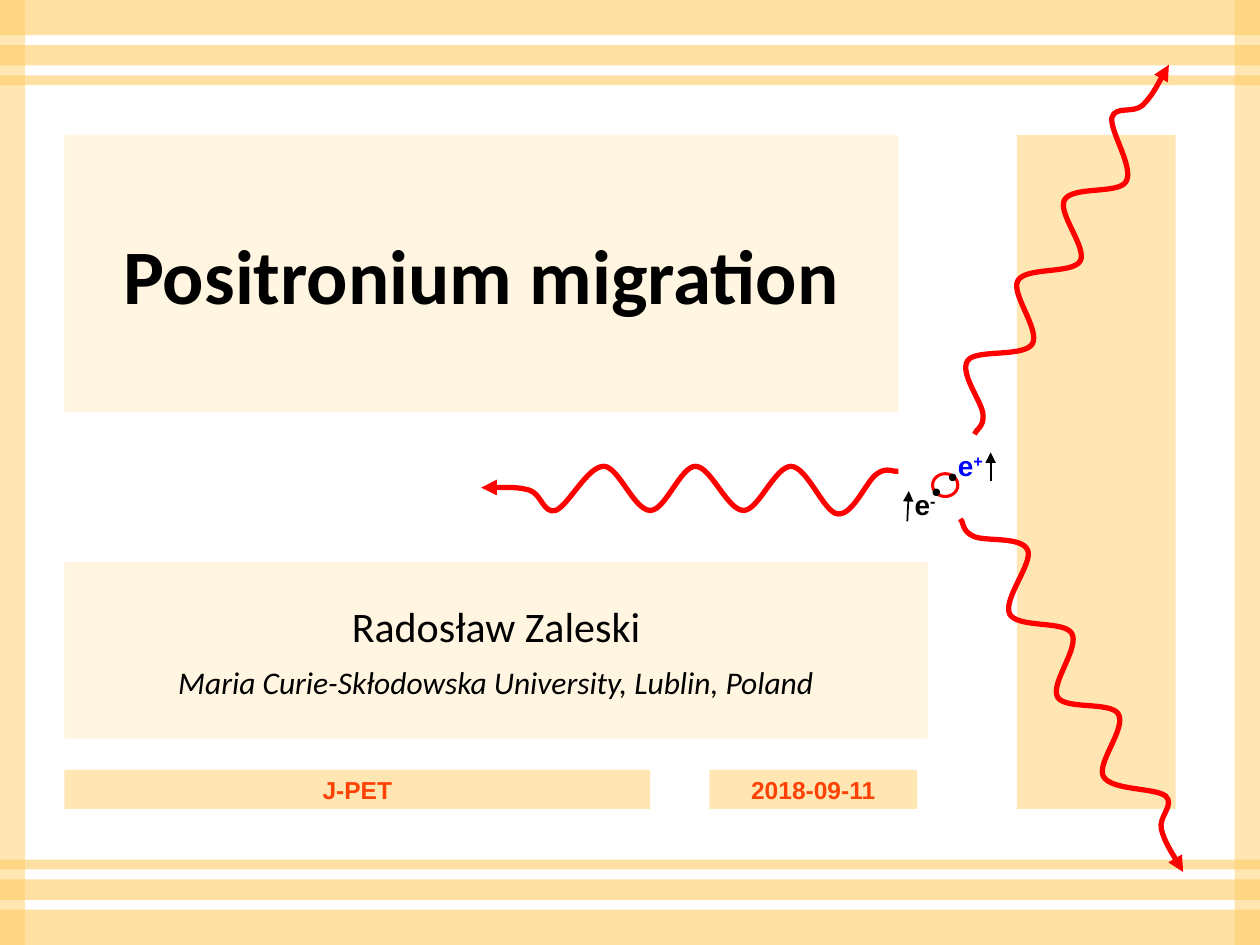
from lxml.etree import SubElement
from pptx import Presentation
from pptx.dml.color import RGBColor
from pptx.enum.shapes import MSO_CONNECTOR, MSO_SHAPE
from pptx.enum.text import MSO_ANCHOR, MSO_AUTO_SIZE, PP_ALIGN
from pptx.oxml.ns import qn
from pptx.util import Cm, Pt

RECT, OVAL = MSO_SHAPE.RECTANGLE, MSO_SHAPE.OVAL
LINE = MSO_CONNECTOR.STRAIGHT
MID, TOP = MSO_ANCHOR.MIDDLE, MSO_ANCHOR.TOP
FIXED = MSO_AUTO_SIZE.NONE
CENTER, LEFT = PP_ALIGN.CENTER, PP_ALIGN.LEFT

BLACK = RGBColor(0, 0, 0)
RED = RGBColor(0xFF, 0, 0)
BLUE = RGBColor(0, 0, 0xFF)
ORANGE = RGBColor(0xFF, 0x41, 0x05)
AMBER = RGBColor(0xFF, 0xCC, 0x66)
SAND = RGBColor(0xFF, 0xE6, 0xB3)
CREAM = RGBColor(0xFF, 0xF5, 0xE1)

WIDE, HIGH = 25.4, 19.05
BANDS = [(0, 0.71), (0.91, 0.41), (1.52, 0.2)]
UNIT = Cm(0.01)
START = (0, 89)
CURVE = [
    (8, 86), (23, 99), (43, 84),
    (64, 71), (91, 0), (122, 3),
    (150, 5), (183, 97), (216, 99),
    (249, 99), (282, 10), (312, 10),
    (345, 10), (378, 99), (409, 99),
    (439, 99), (470, 10), (500, 10),
    (533, 10), (564, 99), (594, 99),
    (627, 99), (665, 20), (691, 10),
    (716, 3), (719, 43), (744, 51),
    (770, 58), (820, 56), (841, 56),
]


def lengths(box):
    return [Cm(n) for n in box]


def write(para, text, size=14, font="Arial", color=BLACK, bold=False,
          italic=False, align=CENTER, before=0, base=0):
    para.alignment = align
    para.space_before = Pt(before)
    run = para.add_run()
    run.text = text
    run.font.size = Pt(size)
    run.font.name = font
    run.font.color.rgb = color
    run.font.bold = bold
    run.font.italic = italic
    if base:
        run.font._element.set("baseline", str(base * 1000))


def add_block(slide, kind, box, fill=None, alpha=None, line=None):
    shape = slide.shapes.add_shape(kind, *lengths(box))
    shape.shadow.inherit = False
    if fill is None:
        shape.fill.background()
    else:
        shape.fill.solid()
        shape.fill.fore_color.rgb = fill
    if alpha:
        tint = shape._element.spPr.find(".//" + qn("a:srgbClr"))
        SubElement(tint, qn("a:alpha")).set("val", str(alpha * 1000))
    if line is None:
        shape.line.fill.background()
    else:
        shape.line.color.rgb = line
        shape.line.width = Pt(1.75)
    return shape


def add_head(shape, color, width):
    shape.line.color.rgb = color
    shape.line.width = Pt(width)
    edge = shape._element.spPr.find(qn("a:ln"))
    SubElement(edge, qn("a:tailEnd")).set("type", "triangle")


def add_frame(slide, x, y, wide, high):
    for left in (x, x + wide - 0.51):
        add_block(slide, RECT, (left, y, 0.51, high), SAND)
    for gap, thick in BANDS:
        for top in (y + gap, y + high - gap - thick):
            add_block(slide, RECT, (x, top, wide, thick), AMBER, alpha=60)


def add_wave(slide, x, y, angle):
    pen = slide.shapes.build_freeform(*START, scale=UNIT)
    pen.add_line_segments(CURVE, close=False)
    wave = pen.convert_to_shape(Cm(x), Cm(y))
    wave.rotation = angle
    wave.shadow.inherit = False
    wave.fill.background()
    add_head(wave, RED, 3)
    track = wave._element.spPr.find(".//" + qn("a:path"))
    steps = track.findall(qn("a:lnTo"))
    for i in range(0, len(steps), 3):
        bend = SubElement(track, qn("a:cubicBezTo"))
        for step in steps[i:i + 3]:
            bend.append(step[0])
            track.remove(step)


def add_atom(slide, x, y):
    add_block(slide, OVAL, (x + 0.51, y + 0.51, 0.51, 0.46), line=RED)
    for dx, dy, wide, sign, color in [(1.02, 0, 0.53, "+", BLUE),
                                      (0.15, 0.79, 0.43, "-", BLACK)]:
        label = slide.shapes.add_textbox(*lengths((x + dx, y + dy, wide, 0.69)))
        frame = label.text_frame
        frame.word_wrap = False
        frame.vertical_anchor = TOP
        frame.margin_left = frame.margin_right = 0
        frame.margin_top = frame.margin_bottom = 0
        look = dict(size=16, color=color, bold=True, align=LEFT)
        write(frame.paragraphs[0], "e", **look)
        write(frame.paragraphs[0], sign, base=30, **look)
    for dx, dy in [(0.84, 0.51), (0.51, 0.81)]:
        add_block(slide, OVAL, (x + dx, y + dy, 0.15, 0.15), BLACK)
    for x1, y1, x2, y2 in [(1.68, 0.66, 1.68, 0.08), (0, 1.47, 0.03, 0.86)]:
        ends = lengths((x + x1, y + y1, x + x2, y + y2))
        spin = slide.shapes.add_connector(LINE, *ends)
        add_head(spin, BLACK, 1)
        SubElement(spin._element.spPr, qn("a:effectLst"))


def fill_holder(holder, box, lines):
    holder.left, holder.top, holder.width, holder.height = lengths(box)
    holder.fill.solid()
    holder.fill.fore_color.rgb = CREAM
    frame = holder.text_frame
    frame.word_wrap = True
    frame.auto_size = FIXED
    frame.vertical_anchor = MID
    for i, (text, look) in enumerate(lines):
        para = frame.add_paragraph() if i else frame.paragraphs[0]
        write(para, text, font="Calibri", **look)


def add_footer(slide, x, y, wide, text):
    bar = add_block(slide, RECT, (x, y, wide, 0.79), SAND)
    bar.text_frame.vertical_anchor = MID
    write(bar.text_frame.paragraphs[0], text, color=ORANGE, bold=True)


def main():
    deck = Presentation()
    deck.slide_width, deck.slide_height = Cm(WIDE), Cm(HIGH)
    slide = deck.slides.add_slide(deck.slide_layouts[0])
    fill_holder(slide.shapes.title, (1.3, 2.72, 16.81, 5.59),
                [("Positronium migration", dict(size=44, bold=True))])
    fill_holder(slide.placeholders[1], (1.3, 11.33, 17.4, 3.56), [
        ("Radosław Zaleski", dict(size=24, before=10)),
        ("Maria Curie-Skłodowska University, Lublin, Poland",
         dict(size=18, italic=True, before=7)),
    ])
    add_block(slide, RECT, (20.5, 2.72, 3.2, 13.59), SAND)
    add_frame(slide, 0, 0, WIDE, HIGH)
    add_atom(slide, 18.29, 9.04)
    for x, y, angle in [(9.7, 9.4, 180), (17.2, 4.42, 300), (17.6, 13.41, 60)]:
        add_wave(slide, x, y, angle)
    add_footer(slide, 1.3, 15.52, 11.81, "J-PET")
    add_footer(slide, 14.3, 15.52, 4.19, "2018-09-11")
    deck.save("out.pptx")


if __name__ == "__main__":
    main()
